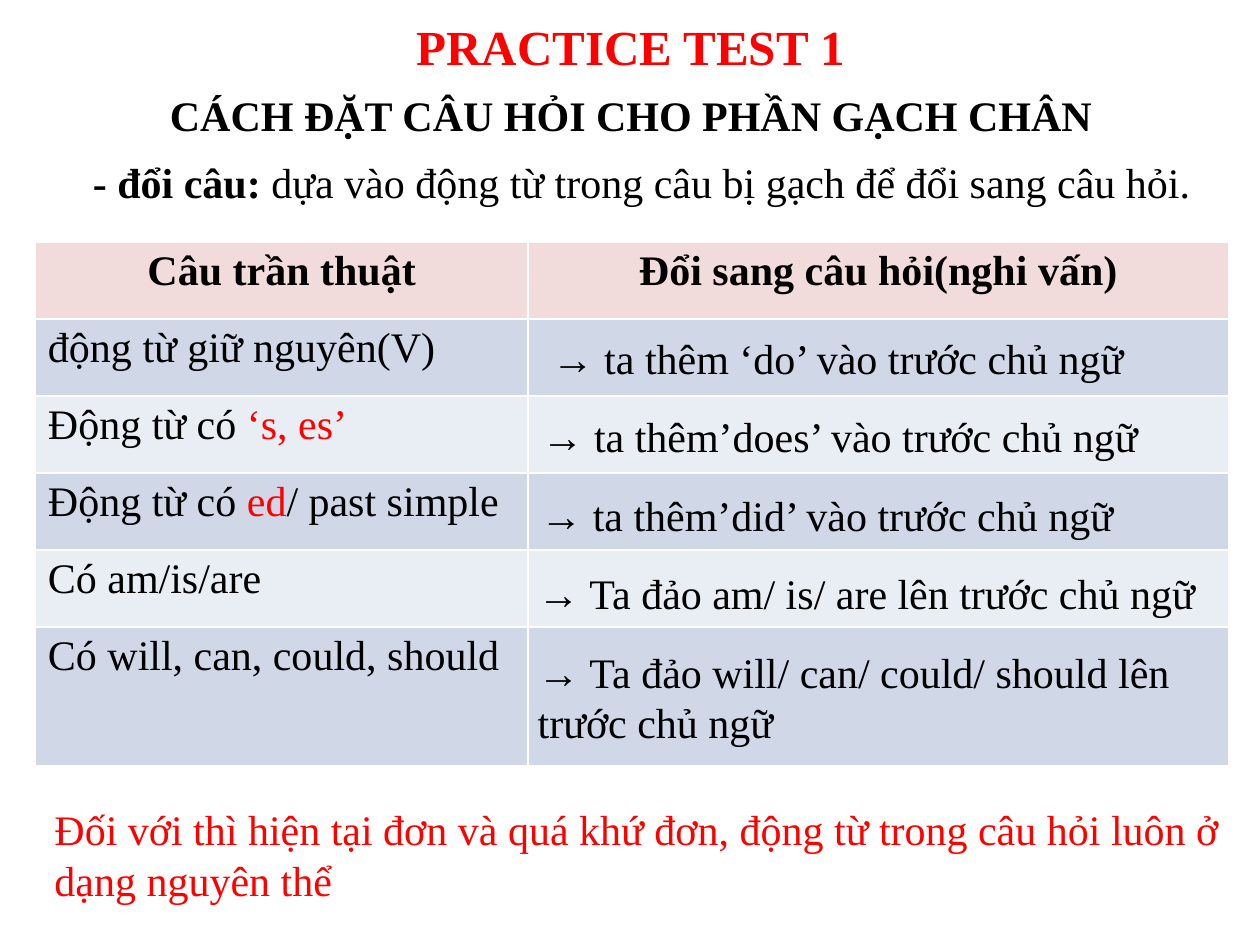
from pptx import Presentation
from pptx.dml.color import RGBColor
from pptx.enum import text as t
from pptx.util import Pt

BLACK = RGBColor(0x00, 0x00, 0x00)
RED = RGBColor(0xFF, 0x00, 0x00)
HEADER_PINK = RGBColor(0xF2, 0xDC, 0xDB)
BAND_DARK = RGBColor(0xD0, 0xD8, 0xE8)
BAND_LIGHT = RGBColor(0xE9, 0xED, 0xF4)

BODY = {"name": "Times New Roman", "size": Pt(24), "bold": False}
STRONG = {**BODY, "bold": True}
HEADING = {**STRONG, "size": Pt(28)}

COLUMN_WIDTHS = (281.5, 400.3)
ROW_HEIGHTS = (44,) * 5 + (79.2,)
HEADERS = ("Câu trần thuật", "Đổi sang câu hỏi(nghi vấn)")
STATEMENTS = [
    [("động từ giữ nguyên(V)", BLACK)],
    [("Động từ có ", BLACK), ("‘s, es’", RED)],
    [("Động từ có ", BLACK), ("ed", RED), ("/ past simple", BLACK)],
    [("Có am/is/are", BLACK)],
    [("Có will, can, could, should", BLACK)],
]
# left, width, height, wording
QUESTION_RULES = [
    (308.2, 399.6, 36, "→ ta thêm ‘do’ vào trước chủ ngữ"),
    (302.4, 412, 36, "→ ta thêm’does’ vào trước chủ ngữ"),
    (301.7, 412, 36, "→ ta thêm’did’ vào trước chủ ngữ"),
    (300.2, 412, 36, "→ Ta đảo am/ is/ are lên trước chủ ngữ"),
    (300.2, 412, 65.5, "→ Ta đảo will/ can/ could/ should lên trước chủ ngữ"),
]
FIRST_RULE_TOP, RULE_STEP = 186.5, 44.8


def add_run(paragraph, wording, color=BLACK, style=BODY):
    run = paragraph.add_run()
    run.text = wording
    for attribute, value in style.items():
        setattr(run.font, attribute, value)
    run.font.color.rgb = color


def add_line(slide, left, top, width, height):
    """Add a wrapping text box and return its first paragraph."""
    frame = slide.shapes.add_textbox(
        Pt(left), Pt(top), Pt(width), Pt(height)).text_frame
    frame.word_wrap = True
    frame.auto_size = t.MSO_AUTO_SIZE.SHAPE_TO_FIT_TEXT
    return frame.paragraphs[0]


def set_title(slide, wording):
    title = slide.shapes.title
    title.left, title.top, title.width, title.height = map(
        Pt, (138.2, 5.8, 444.2, 41))
    title.text_frame.vertical_anchor = t.MSO_ANCHOR.TOP
    paragraph = title.text_frame.paragraphs[0]
    paragraph.alignment = t.PP_ALIGN.CENTER
    add_run(paragraph, wording, RED, HEADING)


def fill_cell(cell, color):
    cell.fill.solid()
    cell.fill.fore_color.rgb = color


def add_statement_table(slide):
    table = slide.shapes.add_table(
        len(ROW_HEIGHTS), len(COLUMN_WIDTHS), Pt(20.2), Pt(138.2),
        Pt(sum(COLUMN_WIDTHS)), Pt(sum(ROW_HEIGHTS))).table
    for column, width in zip(table.columns, COLUMN_WIDTHS):
        column.width = Pt(width)
    for row, height in zip(table.rows, ROW_HEIGHTS):
        row.height = Pt(height)

    for cell, header in zip(table.rows[0].cells, HEADERS):
        fill_cell(cell, HEADER_PINK)
        paragraph = cell.text_frame.paragraphs[0]
        paragraph.alignment = t.PP_ALIGN.CENTER
        add_run(paragraph, header, style=STRONG)

    for number, statement in enumerate(STATEMENTS, start=1):
        for cell in table.rows[number].cells:
            fill_cell(cell, BAND_DARK if number % 2 else BAND_LIGHT)
        paragraph = table.cell(number, 0).text_frame.paragraphs[0]
        for wording, color in statement:
            add_run(paragraph, wording, color)


def main():
    deck = Presentation()
    deck.slide_width, deck.slide_height = Pt(720), Pt(540)
    slide = deck.slides.add_slide(deck.slide_layouts[5])

    set_title(slide, "PRACTICE TEST 1")
    add_run(add_line(slide, 90, 47.5, 624, 36),
            "CÁCH ĐẶT CÂU HỎI CHO PHẦN GẠCH CHÂN", style=STRONG)

    instruction = add_line(slide, 10, 85.7, 697.7, 36)
    instruction.level = 1
    add_run(instruction, "- đổi câu: ", style=STRONG)
    add_run(instruction, "dựa vào động từ trong câu bị gạch để đổi sang câu hỏi.")

    add_statement_table(slide)
    for index, (left, width, height, rule) in enumerate(QUESTION_RULES):
        top = FIRST_RULE_TOP + index * RULE_STEP
        add_run(add_line(slide, left, top, width, height), rule)

    add_run(add_line(slide, 24, 455.8, 696, 65.5),
            "Đối với thì hiện tại đơn và quá khứ đơn, động từ trong câu hỏi "
            "luôn ở dạng nguyên thể", RED)
    deck.save("out.pptx")


if __name__ == "__main__":
    main()
